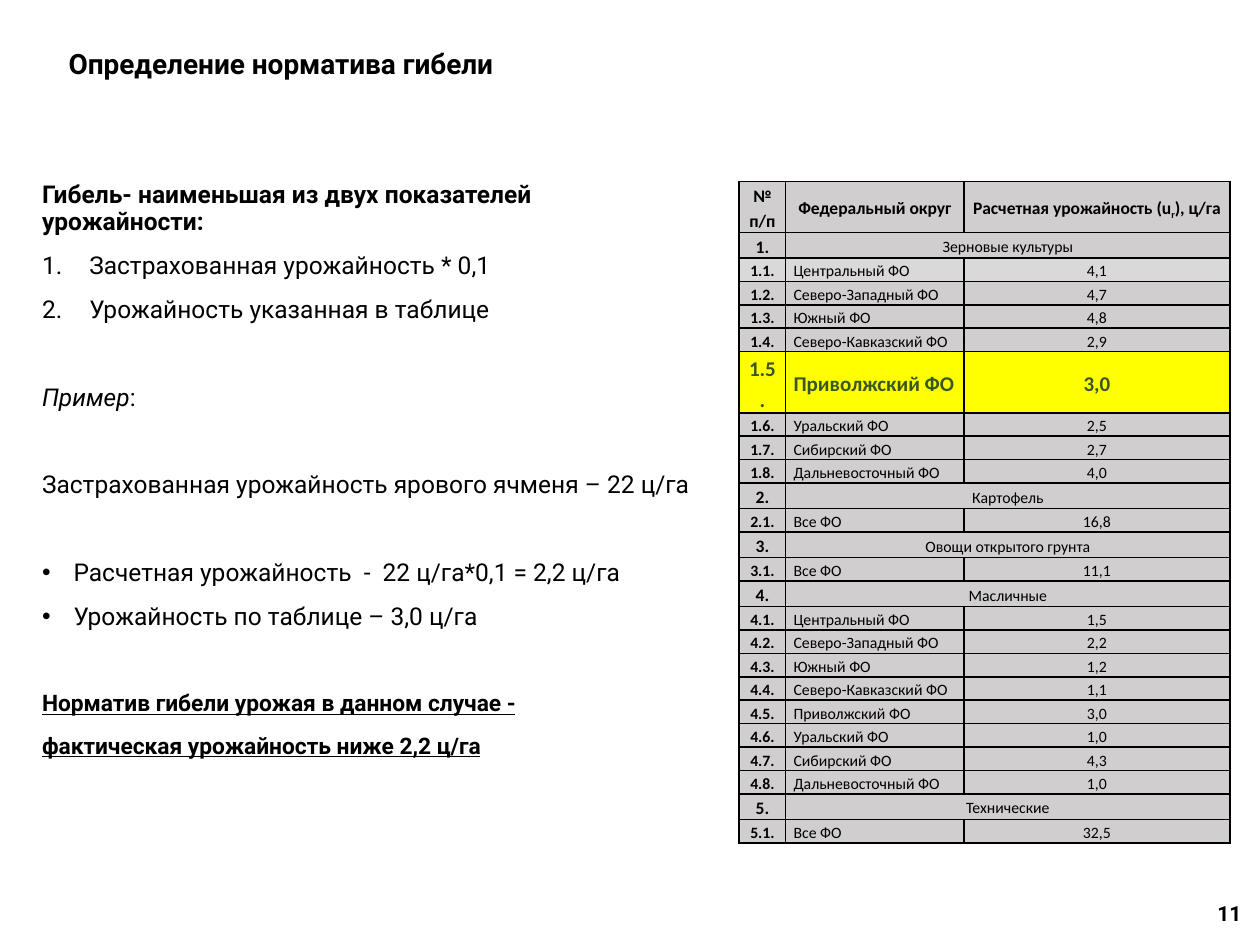
import pptx
import pptx.util
import pptx.oxml.ns
import pptx.dml.color
import pptx.enum.text
import lxml.etree

Pt = pptx.util.Pt
Color = pptx.dml.color.RGBColor
Align = pptx.enum.text.PP_ALIGN
Anchor = pptx.enum.text.MSO_ANCHOR
qn = pptx.oxml.ns.qn

BLACK = Color(0x00, 0x00, 0x00)
GREY = Color(0xD0, 0xCE, 0xCE)
PALE = Color(0xD9, 0xD9, 0xD9)
YELLOW = Color(0xFF, 0xFF, 0x00)
GREEN = Color(0x38, 0x57, 0x23)

LINES = [
    ("Гибель- наименьшая из двух показателей", "bold", 0),
    ("урожайности:", "bold", 0),
    ("Застрахованная урожайность * 0,1", "number", 10),
    ("Урожайность указанная в таблице", "number", 10),
    ("Пример|:", "slant", 35),
    ("Застрахованная урожайность ярового ячменя – 22 ц/га", "plain", 35),
    ("Расчетная урожайность  -  22 ц/га*0,1 = 2,2 ц/га", "dot", 35),
    ("Урожайность по таблице – 3,0 ц/га", "dot", 10),
    ("Норматив гибели урожая в данном случае -", "sum", 35),
    ("фактическая урожайность ниже 2,2 ц/га", "sum", 10),
]

ZONES = ["Центральный ФО", "Северо-Западный ФО", "Южный ФО", "Северо-Кавказский ФО",
         "Приволжский ФО", "Уральский ФО", "Сибирский ФО", "Дальневосточный ФО"]
CROPS = [
    ("Зерновые культуры", ZONES, ["4,1", "4,7", "4,8", "2,9", "3,0", "2,5", "2,7", "4,0"]),
    ("Картофель", ["Все ФО"], ["16,8"]),
    ("Овощи открытого грунта", ["Все ФО"], ["11,1"]),
    ("Масличные", ZONES, ["1,5", "2,2", "1,2", "1,1", "3,0", "1,0", "4,3", "1,0"]),
    ("Технические", ["Все ФО"], ["32,5"]),
]


def place(shape, box):
    shape.left, shape.top, shape.width, shape.height = [Pt(side) for side in box]


def style(run, face, size, bold=False, color=BLACK):
    font = run.font
    font.name, font.size, font.bold = face, Pt(size), bold
    font.color.rgb = color


def mark(para, kind):
    props = para._p.get_or_add_pPr()
    indent = {"number": 27, "dot": 18}.get(kind, 0)
    props.set("marL", str(Pt(indent)))
    props.set("indent", str(-Pt(indent)))
    if kind == "number":
        lxml.etree.SubElement(props, qn("a:buAutoNum"), type="arabicPeriod")
    elif kind == "dot":
        lxml.etree.SubElement(props, qn("a:buFont"), typeface="Arial")
        lxml.etree.SubElement(props, qn("a:buChar"), char="•")
    else:
        lxml.etree.SubElement(props, qn("a:buNone"))


def draw_title(shape, box):
    place(shape, box)
    frame = shape.text_frame
    frame.text = "Определение норматива гибели"
    frame.auto_size = pptx.enum.text.MSO_AUTO_SIZE.NONE
    frame.vertical_anchor = Anchor.MIDDLE
    para = frame.paragraphs[0]
    para.alignment = Align.LEFT
    para.line_spacing = 0.9
    style(para.runs[0], "Roboto", 16, True)


def draw_body(shape, box):
    place(shape, box)
    frame = shape.text_frame
    frame.text = "\n".join(text.split("|")[0] for text, kind, gap in LINES)
    frame.auto_size = pptx.enum.text.MSO_AUTO_SIZE.NONE
    frame.vertical_anchor = Anchor.TOP
    for para, (text, kind, gap) in zip(frame.paragraphs, LINES):
        para.line_spacing = 0.9
        para.space_before = Pt(gap)
        mark(para, kind)
        for part in text.split("|")[1:]:
            para.add_run().text = part
        for run in para.runs:
            style(run, "Roboto", 13 if kind == "sum" else 14, kind in ("bold", "sum"))
        if kind == "sum":
            para.runs[0].font.underline = True
        if kind == "slant":
            para.runs[0].font.italic = True


def draw_page(slide, box):
    shape = slide.shapes.add_textbox(*[Pt(side) for side in box])
    frame = shape.text_frame
    frame.text = "11"
    frame.word_wrap = True
    frame.vertical_anchor = Anchor.MIDDLE
    frame.paragraphs[0].alignment = Align.RIGHT
    style(frame.paragraphs[0].runs[0], "Roboto", 12, True)


def edge(cell):
    props = cell._tc.get_or_add_tcPr()
    for spot, side in enumerate(("lnL", "lnR", "lnT", "lnB")):
        line = lxml.etree.Element(qn("a:" + side), w=str(Pt(1)))
        fill = lxml.etree.SubElement(line, qn("a:solidFill"))
        lxml.etree.SubElement(fill, qn("a:srgbClr"), val=str(BLACK))
        props.insert(spot, line)


def fill_cell(cell, text, size, bold=False, color=BLACK, fill=GREY, align=Align.CENTER):
    cell.margin_left = cell.margin_right = Pt(4.5)
    cell.margin_top = cell.margin_bottom = 0
    cell.vertical_anchor = Anchor.MIDDLE
    cell.fill.solid()
    cell.fill.fore_color.rgb = fill
    edge(cell)
    parts = text.split("|")
    para = cell.text_frame.paragraphs[0]
    para.text = parts[0]
    for part in parts[1:]:
        para.add_run().text = part
    para.alignment = align
    para.line_spacing = 1.2
    for run in para.runs:
        style(run, "Calibri", size, bold, color)
    if len(parts) > 1:
        para.runs[1]._r.get_or_add_rPr().set("baseline", "-25000")


def draw_table(slide, box):
    count = 1 + sum(1 + len(zones) for name, zones, yields in CROPS)
    shape = slide.shapes.add_table(count, 3, *[Pt(side) for side in box])
    table = shape.table
    table.first_row = table.horz_banding = False
    for col, share in zip(table.columns, (0.095, 0.363, 0.542)):
        col.width = Pt(round(box[2] * share, 1))
    table.rows[0].height = Pt(29.2)
    heads = ("№ п/п", "Федеральный округ", "Расчетная урожайность (u|r|), ц/га")
    for col, head in enumerate(heads):
        fill_cell(table.cell(0, col), head, 10, True)
    row = 1
    for group, (name, zones, yields) in enumerate(CROPS, 1):
        table.rows[row].height = Pt(14.6)
        fill_cell(table.cell(row, 0), f"{group}.", 10, True)
        fill_cell(table.cell(row, 1), name, 9)
        fill_cell(table.cell(row, 2), "", 9)
        table.cell(row, 1).merge(table.cell(row, 2))
        row += 1
        for item, (zone, value) in enumerate(zip(zones, yields), 1):
            key = (group, item) == (1, 5)
            size, color = (12, GREEN) if key else (9, BLACK)
            fill = YELLOW if key else PALE if (group, item) == (1, 1) else GREY
            table.rows[row].height = Pt(35 if key else 13.4)
            fill_cell(table.cell(row, 0), f"{group}.{item}.", size, True, color, fill)
            fill_cell(table.cell(row, 1), zone, size, key, color, fill, Align.LEFT)
            fill_cell(table.cell(row, 2), value, size, key, color, fill)
            row += 1


def main():
    deck = pptx.Presentation()
    deck.slide_width, deck.slide_height = Pt(720), Pt(540)
    slide = deck.slides.add_slide(deck.slide_layouts[1])
    draw_title(slide.shapes.title, (32, 18, 670, 39))
    draw_page(slide, (661, 507, 55.5, 29))
    draw_body(slide.placeholders[1], (16.8, 100.8, 667.5, 384.5))
    draw_table(slide, (422.4, 103.6, 280.4, 378))
    deck.save("out.pptx")


if __name__ == "__main__":
    main()
